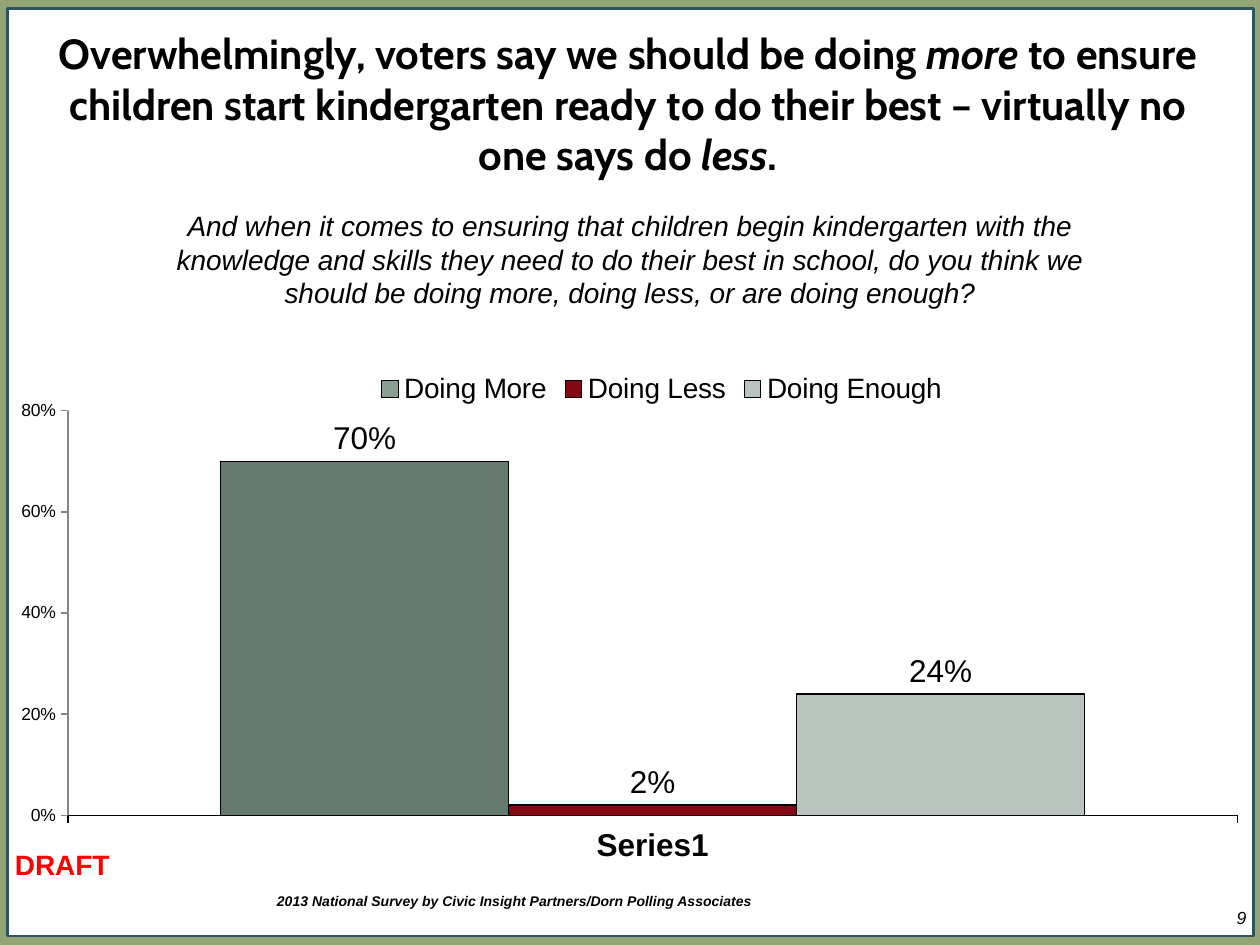
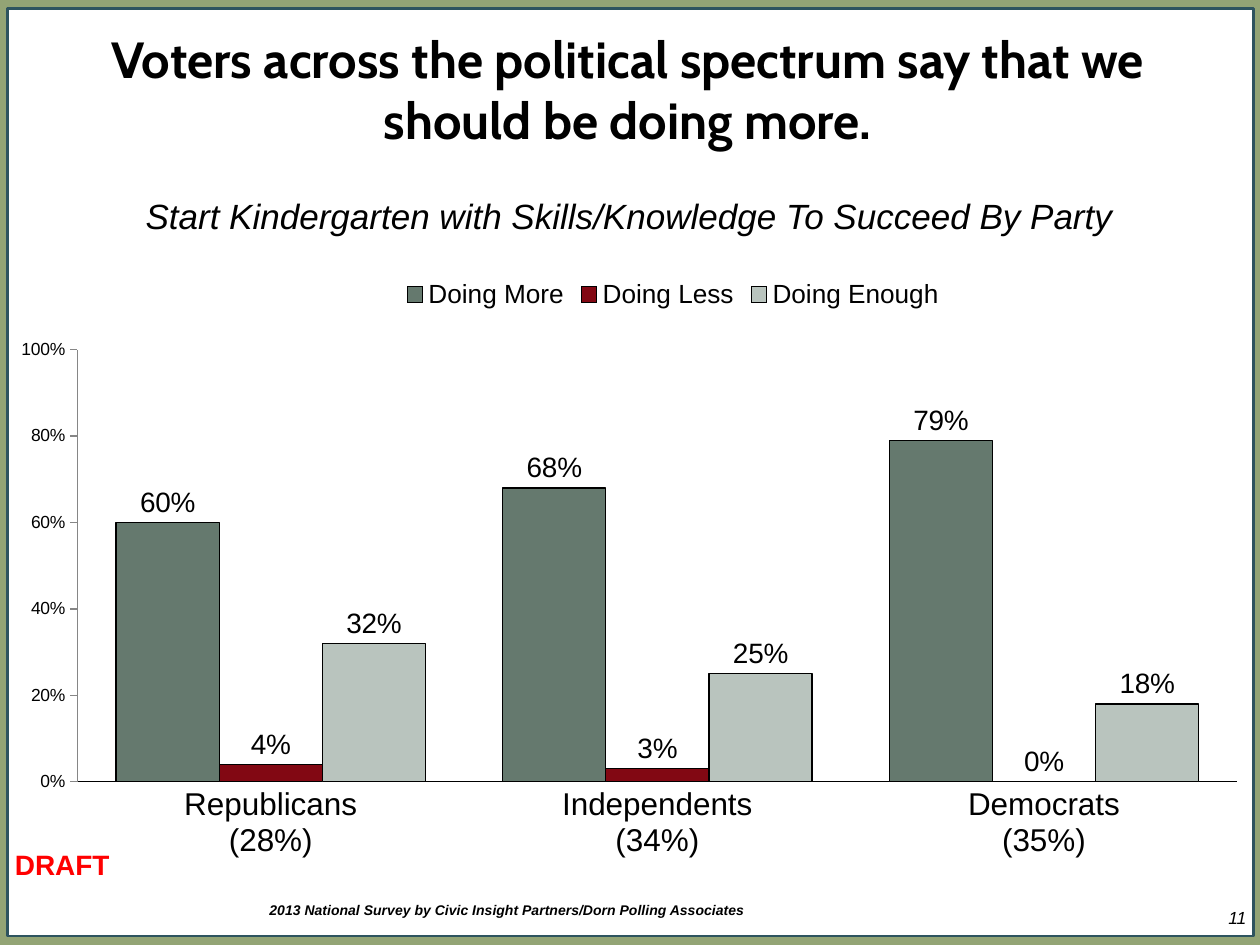
from lxml.etree import SubElement
from pptx import Presentation
from pptx.chart.data import CategoryChartData
from pptx.dml.color import RGBColor
from pptx.enum.chart import XL_CHART_TYPE, XL_LABEL_POSITION, XL_LEGEND_POSITION, XL_TICK_MARK
from pptx.enum.shapes import MSO_SHAPE
from pptx.enum.text import MSO_ANCHOR, MSO_AUTO_SIZE, PP_ALIGN
from pptx.oxml.ns import qn
from pptx.util import Inches, Pt

SAGE = RGBColor(0x93, 0xA4, 0x75)
TEAL = RGBColor(0x2E, 0x54, 0x5F)
WHITE = RGBColor(0xFF, 0xFF, 0xFF)
BLACK = RGBColor(0x00, 0x00, 0x00)
RED = RGBColor(0xFF, 0x00, 0x00)
AXIS_GREY = RGBColor(0x86, 0x86, 0x86)
PALE_GREEN = RGBColor(0x8B, 0x9E, 0x94)
DARK_GREEN = RGBColor(0x65, 0x79, 0x6E)
MAROON = RGBColor(0x82, 0x08, 0x13)
LIGHT_GREEN = RGBColor(0xB9, 0xC4, 0xBE)

ANSWERS = ["Doing More", "Doing Less", "Doing Enough"]
CREDIT = "2013 National Survey by Civic Insight Partners/Dorn Polling Associates"

SLIDES = [
    {
        "number": "9",
        "title": "Overwhelmingly, voters say we should be doing *more *to ensure children start "
                 "kindergarten ready to do their best – virtually no one says do *less*.",
        "title_size": 24,
        "question": "And when it comes to ensuring that children begin kindergarten with the "
                    "knowledge and skills they need to do their best in school, do you think we "
                    "should be doing more, doing less, or are doing enough?",
        "question_size": 16,
        "question_area": (1.09, 1.6, 7.82, 0.91),
        "credit_area": (2.1, 6.91, 7.53, 0.48),
        "chart_area": (0.17, 2.8, 9.67, 4.05),
        "plot_area": {"x": 0.037, "y": 0.114, "w": 0.961, "h": 0.794},
        "legend_area": {"x": 0.287, "y": 0.03},
        "legend_size": 16,
        "label_size": 18,
        "category_bold": True,
        "category_tick": XL_TICK_MARK.OUTSIDE,
        "top": 0.8,
        "gap": 106,
        "categories": ["Series1"],
        "values": [[0.7], [0.02], [0.24]],
        "colors": [PALE_GREEN, MAROON, LIGHT_GREEN],
        "first_bar": DARK_GREEN,
    },
    {
        "number": "11",
        "title": "Voters across the political spectrum say that we should be doing more.",
        "title_size": 29,
        "question": "Start Kindergarten with Skills/Knowledge To Succeed By Party",
        "question_size": 20,
        "question_area": (0.03, 1.49, 9.93, 0.44),
        "credit_area": (2.04, 6.98, 7.53, 0.48),
        "chart_area": (0.17, 2.07, 9.67, 4.93),
        "plot_area": {"x": 0.044, "y": 0.143, "w": 0.954, "h": 0.696},
        "legend_area": {"x": 0.308, "y": 0.023},
        "legend_size": 15,
        "label_size": 16,
        "category_bold": False,
        "category_tick": XL_TICK_MARK.NONE,
        "top": 1,
        "gap": 75,
        "categories": ["Republicans\n(28%)", "Independents\n(34%)", "Democrats\n(35%)"],
        "values": [[0.6, 0.68, 0.79], [0.04, 0.03, 0], [0.32, 0.25, 0.18]],
        "colors": [DARK_GREEN, MAROON, LIGHT_GREEN],
        "first_bar": DARK_GREEN,
    },
]


def write(box, text, area, size, font="Arial", color=BLACK, bold=False, italic=False,
          align=PP_ALIGN.LEFT, anchor=MSO_ANCHOR.TOP):
    box.left, box.top, box.width, box.height = [Inches(length) for length in area]
    frame = box.text_frame
    frame.word_wrap = True
    frame.auto_size = MSO_AUTO_SIZE.NONE
    frame.vertical_anchor = anchor
    para = frame.paragraphs[0]
    para.alignment = align
    for index, piece in enumerate(text.split("*")):
        span = para.add_run()
        span.text = piece
        span.font.name = font
        span.font.size = Pt(size)
        span.font.bold = bold
        span.font.italic = italic or index % 2 == 1
        span.font.color.rgb = color


def add_layout(parent, area, inner=False):
    for old in parent.findall(qn("c:layout")):
        parent.remove(old)
    layout = SubElement(parent, qn("c:layout"))
    manual = SubElement(layout, qn("c:manualLayout"))
    if inner:
        SubElement(manual, qn("c:layoutTarget")).set("val", "inner")
    for side in ("x", "y"):
        SubElement(manual, qn(f"c:{side}Mode")).set("val", "edge")
    for side, share in area.items():
        SubElement(manual, qn(f"c:{side}")).set("val", str(share))
    return layout


deck = Presentation()
deck.slide_width = Inches(10)
deck.slide_height = Inches(7.5)
deck.slide_master.background.fill.solid()
deck.slide_master.background.fill.fore_color.rgb = SAGE

for content in SLIDES:
    page = deck.slides.add_slide(deck.slide_layouts[5])
    title = page.shapes.title

    panel = page.shapes.add_shape(
        MSO_SHAPE.RECTANGLE, Inches(0.06), Inches(0.07), Inches(9.89), Inches(7.36))
    panel.shadow.inherit = False
    panel.fill.solid()
    panel.fill.fore_color.rgb = WHITE
    panel.line.color.rgb = TEAL
    panel.line.width = Pt(1.5)
    title.element.addprevious(panel.element)

    write(title, content["title"], (0.17, 0.17, 9.63, 1.25), content["title_size"],
          font="Cabin", bold=True, align=PP_ALIGN.CENTER)
    number, draft, question, credit = [page.shapes.add_textbox(0, 0, 0, 0) for _ in range(4)]
    write(number, content["number"], (8.94, 7.15, 1.05, 0.27), 10,
          italic=True, align=PP_ALIGN.RIGHT)
    write(draft, "DRAFT", (0.02, 6.67, 1.35, 0.37), 16,
          color=RED, bold=True, anchor=MSO_ANCHOR.BOTTOM)
    write(question, content["question"], content["question_area"], content["question_size"],
          italic=True, align=PP_ALIGN.CENTER, anchor=MSO_ANCHOR.MIDDLE)
    write(credit, CREDIT, content["credit_area"], 8,
          bold=True, italic=True, anchor=MSO_ANCHOR.MIDDLE)

    data = CategoryChartData(number_format="0%")
    data.categories = content["categories"]
    for answer, values in zip(ANSWERS, content["values"]):
        data.add_series(answer, values)
    area = [Inches(length) for length in content["chart_area"]]
    chart = page.shapes.add_chart(XL_CHART_TYPE.COLUMN_CLUSTERED, *area, data).chart
    chart.has_title = False
    chart.font.name = "Arial"
    chart.font.size = Pt(18)
    chart.font.color.rgb = BLACK

    chart.has_legend = True
    legend = chart.legend
    legend.position = XL_LEGEND_POSITION.TOP
    legend.include_in_layout = False
    legend.font.size = Pt(content["legend_size"])
    legend_element = legend._element
    legend_layout = add_layout(legend_element, content["legend_area"])
    legend_element.find(qn("c:legendPos")).addnext(legend_layout)

    plot_element = chart._chartSpace.chart.plotArea
    plot_element.insert(0, add_layout(plot_element, content["plot_area"], inner=True))

    plot = chart.plots[0]
    plot.vary_by_categories = False
    plot.gap_width = content["gap"]
    plot.overlap = 0
    plot.has_data_labels = True
    labels = plot.data_labels
    labels.show_value = True
    labels.position = XL_LABEL_POSITION.OUTSIDE_END
    labels.number_format = "0%"
    labels.number_format_is_linked = False
    labels.font.size = Pt(content["label_size"])

    for series, color in zip(plot.series, content["colors"]):
        series.invert_if_negative = False
        series.format.fill.solid()
        series.format.fill.fore_color.rgb = color
        series.format.line.color.rgb = BLACK
        series.format.line.width = Pt(0.75)
    if content["first_bar"] != content["colors"][0]:
        bar = plot.series[0].points[0].format
        bar.fill.solid()
        bar.fill.fore_color.rgb = content["first_bar"]
        bar.line.color.rgb = BLACK
        bar.line.width = Pt(0.75)

    category_axis = chart.category_axis
    category_axis.major_tick_mark = content["category_tick"]
    category_axis.tick_labels.font.size = Pt(18)
    category_axis.tick_labels.font.bold = content["category_bold"]
    category_axis.format.line.color.rgb = BLACK
    category_axis.format.line.width = Pt(0.75)

    value_axis = chart.value_axis
    value_axis.minimum_scale = 0
    value_axis.maximum_scale = content["top"]
    value_axis.major_unit = 0.2
    value_axis.has_major_gridlines = False
    value_axis.major_tick_mark = XL_TICK_MARK.OUTSIDE
    value_axis.tick_labels.font.size = Pt(10)
    value_axis.tick_labels.number_format = "0%"
    value_axis.tick_labels.number_format_is_linked = False
    value_axis.format.line.color.rgb = AXIS_GREY
    value_axis.format.line.width = Pt(0.75)

deck.save("out.pptx")
